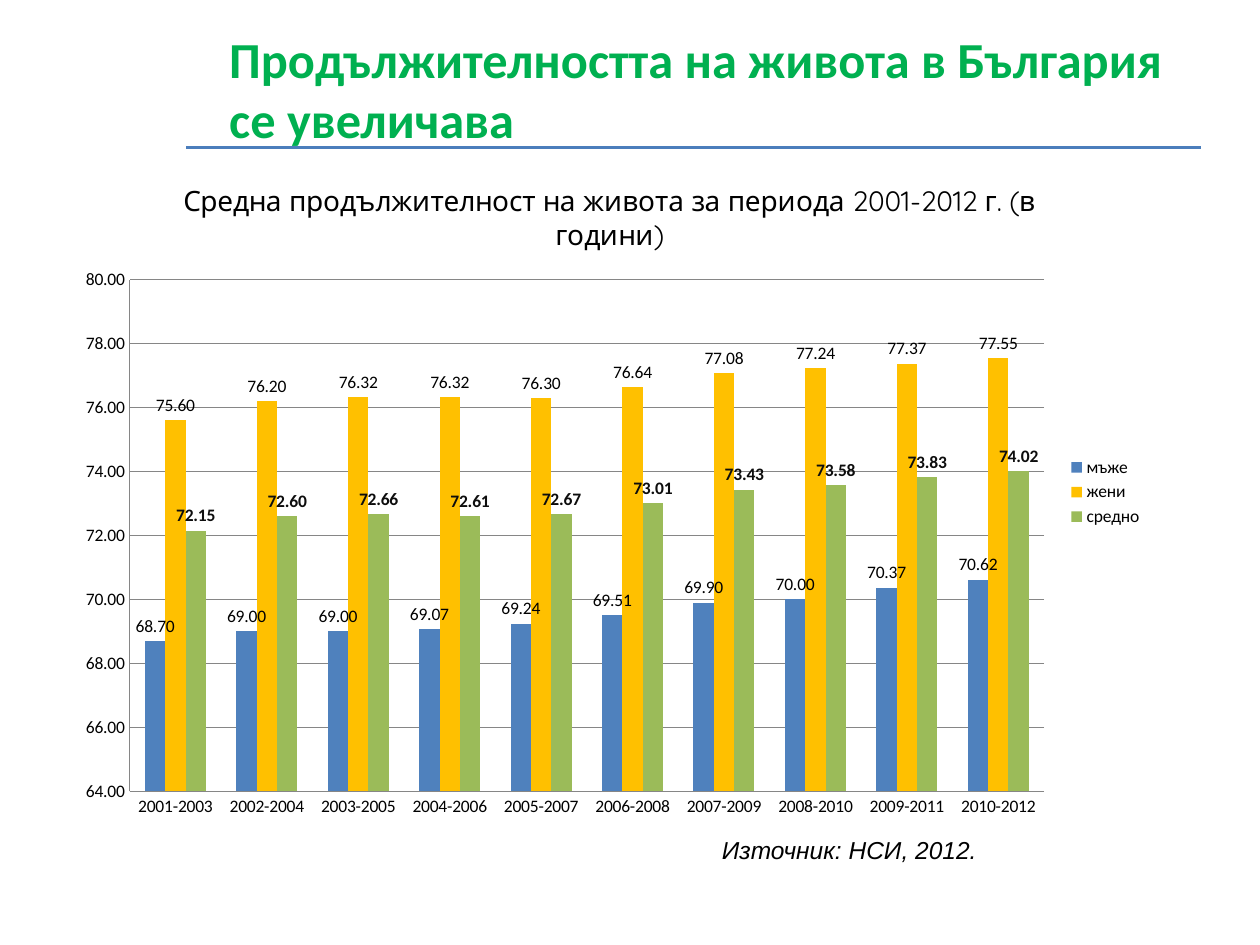
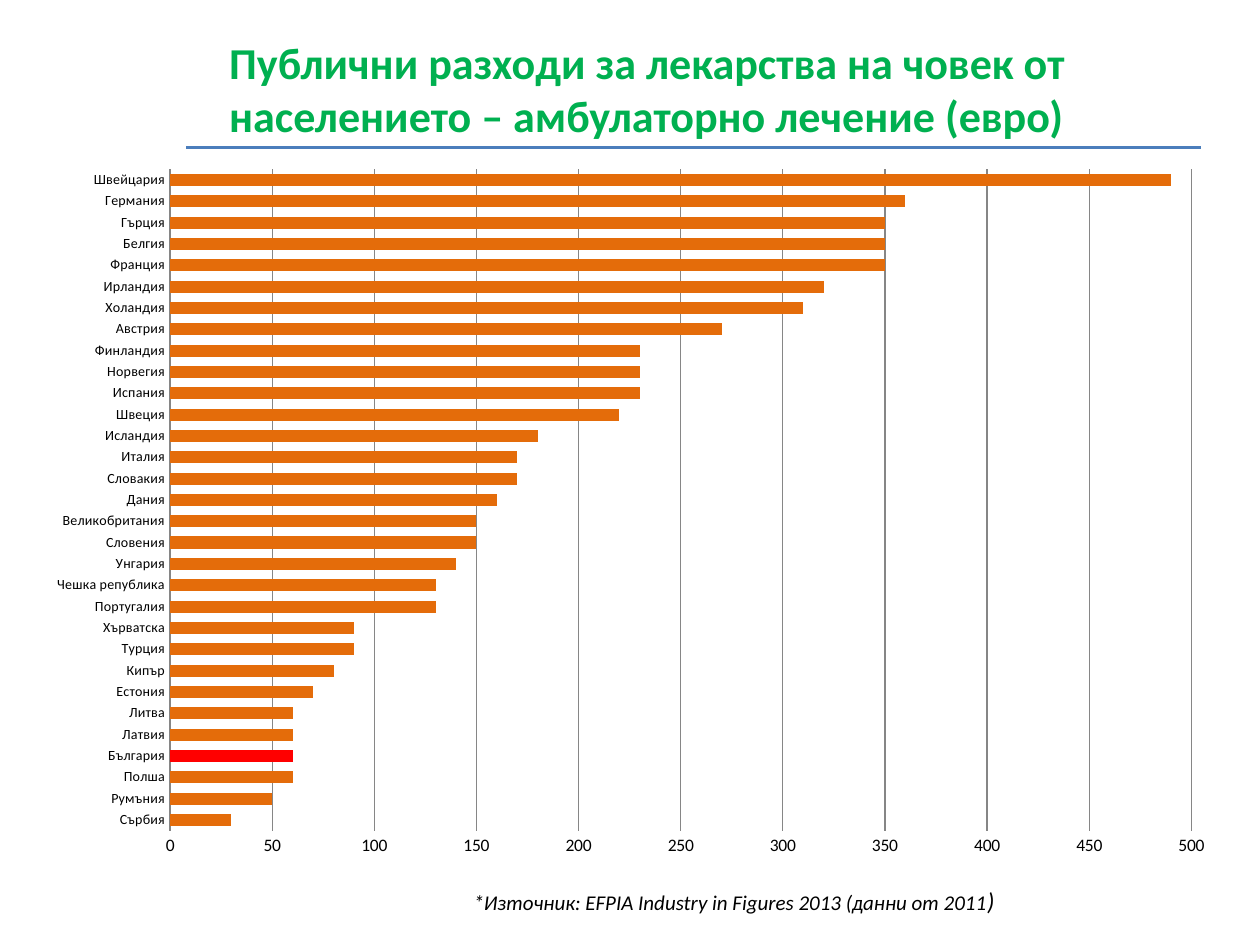
import pptx
import pptx.chart.data
import pptx.dml.color
import pptx.enum.chart
import pptx.enum.shapes
import pptx.enum.text
import pptx.oxml
import pptx.oxml.ns
import pptx.util

Pt = pptx.util.Pt
RGBColor = pptx.dml.color.RGBColor

# Shared colours and fonts
GREEN = RGBColor(0x00, 0xB0, 0x50)
RULE_BLUE = RGBColor(0x4B, 0x7E, 0xBC)
BLACK = RGBColor(0x00, 0x00, 0x00)
NEAR_BLACK = RGBColor(0x0D, 0x0D, 0x0D)
GRID_GREY = RGBColor(0x86, 0x86, 0x86)
MEN_BLUE = RGBColor(0x4F, 0x81, 0xBD)
WOMEN_YELLOW = RGBColor(0xFF, 0xC0, 0x00)
AVERAGE_GREEN = RGBColor(0x9B, 0xBB, 0x59)
ORANGE = RGBColor(0xE4, 0x6C, 0x0A)
RED = RGBColor(0xFF, 0x00, 0x00)
BODY_FONT = "Calibri"

# Life expectancy in years, by overlapping three-year periods
PERIODS = [f"{year}-{year + 2}" for year in range(2001, 2011)]
LIFE_EXPECTANCY = {
    "мъже": (MEN_BLUE, [68.7, 69, 69, 69.07, 69.24, 69.51, 69.9, 70, 70.37, 70.62]),
    "жени": (WOMEN_YELLOW, [75.6, 76.2, 76.32, 76.32, 76.3, 76.64, 77.08, 77.24, 77.37, 77.55]),
    "средно": (AVERAGE_GREEN, [72.15, 72.6, 72.66, 72.61, 72.67, 73.01, 73.43, 73.58, 73.83, 74.02]),
}

# Public spending on medicines per person, in euro
SPENDING = {
    "Сърбия": 30, "Румъния": 50, "Полша": 60, "България": 60, "Латвия": 60,
    "Литва": 60, "Естония": 70, "Кипър": 80, "Турция": 90, "Хърватска": 90,
    "Португалия": 130, "Чешка република": 130, "Унгария": 140, "Словения": 150,
    "Великобритания": 150, "Дания": 160, "Словакия": 170, "Италия": 170,
    "Исландия": 180, "Швеция": 220, "Испания": 230, "Норвегия": 230,
    "Финландия": 230, "Австрия": 270, "Холандия": 310, "Ирландия": 320,
    "Франция": 350, "Белгия": 350, "Гърция": 350, "Германия": 360,
    "Швейцария": 490,
}


def format_font(font, size, color=BLACK, name=BODY_FONT, bold=False, italic=False):
    font.size = Pt(size)
    font.name = name
    font.bold = bold
    font.italic = italic
    font.color.rgb = color


def write(paragraph, text, **font_format):
    """Append a run of text to a paragraph."""
    run = paragraph.add_run()
    run.text = text
    format_font(run.font, **font_format)


def add_titled_slide(deck, title, size):
    """Add a slide with a green heading above a blue rule."""
    slide = deck.slides.add_slide(deck.slide_layouts[5])
    heading = slide.shapes.title
    heading.left, heading.top = Pt(123.8), Pt(16.6)
    heading.width, heading.height = Pt(563.8), Pt(67.7)
    frame = heading.text_frame
    frame.auto_size = pptx.enum.text.MSO_AUTO_SIZE.NONE
    frame.vertical_anchor = pptx.enum.text.MSO_ANCHOR.MIDDLE
    frame.paragraphs[0].alignment = pptx.enum.text.PP_ALIGN.LEFT
    write(frame.paragraphs[0], title, size=size, color=GREEN, bold=True)

    rule = slide.shapes.add_connector(
        pptx.enum.shapes.MSO_CONNECTOR.STRAIGHT, Pt(106.5), Pt(84.3), Pt(686.2), Pt(84.3))
    rule.line.color.rgb = RULE_BLUE
    rule.line.width = Pt(2.25)
    rule.element.spPr.append(pptx.oxml.parse_xml(
        f"<a:effectLst {pptx.oxml.ns.nsdecls('a')}/>"))
    return slide


def add_source_note(slide, left, top, width):
    """Add a one-line note and return its paragraph."""
    note = slide.shapes.add_textbox(Pt(left), Pt(top), Pt(width), Pt(24.5))
    note.text_frame.word_wrap = False
    note.text_frame.auto_size = pptx.enum.text.MSO_AUTO_SIZE.SHAPE_TO_FIT_TEXT
    return note.text_frame.paragraphs[0]


def place_plot(chart, x, y, w, h):
    """Fix the inner plot area, in fractions of the chart."""
    plot_area = chart.element.xpath("c:chart/c:plotArea")[0]
    for layout in plot_area.xpath("c:layout"):
        plot_area.remove(layout)
    sizes = "".join(f'<c:{tag} val="{value}"/>' for tag, value in
                    (("x", x), ("y", y), ("w", w), ("h", h)))
    plot_area.insert(0, pptx.oxml.parse_xml(
        f"<c:layout {pptx.oxml.ns.nsdecls('c')}><c:manualLayout>"
        '<c:layoutTarget val="inner"/><c:xMode val="edge"/><c:yMode val="edge"/>'
        f"{sizes}</c:manualLayout></c:layout>"))


def style_line(line):
    line.color.rgb = GRID_GREY
    line.width = Pt(0.75)


def add_bar_chart(slide, kind, box, categories, series, number_format, scale, gap):
    """Add a clustered chart; series maps a name to (colour, values)."""
    chart_data = pptx.chart.data.CategoryChartData(number_format=number_format)
    chart_data.categories = categories
    for name, (_, values) in series.items():
        chart_data.add_series(name, values)
    chart = slide.shapes.add_chart(kind, *map(Pt, box), chart_data).chart
    format_font(chart.font, size=10)
    chart.has_title = chart.has_legend = False

    plot = chart.plots[0]
    plot.gap_width = gap
    plot.vary_by_categories = False
    for bars, (color, _) in zip(plot.series, series.values()):
        bars.format.fill.solid()
        bars.format.fill.fore_color.rgb = color
        bars.invert_if_negative = False

    for axis in (chart.category_axis, chart.value_axis):
        axis.major_tick_mark = axis.minor_tick_mark = pptx.enum.chart.XL_TICK_MARK.NONE
        style_line(axis.format.line)
    chart.category_axis.has_major_gridlines = False
    values_axis = chart.value_axis
    values_axis.minimum_scale, values_axis.maximum_scale, values_axis.major_unit = scale
    values_axis.has_major_gridlines = True
    style_line(values_axis.major_gridlines.format.line)
    values_axis.tick_labels.number_format = number_format
    values_axis.tick_labels.number_format_is_linked = False
    return chart


def label_bars(bars, **font_format):
    labels = bars.data_labels
    labels.show_value = True
    labels.number_format = "0.00"
    labels.number_format_is_linked = False
    labels.position = pptx.enum.chart.XL_LABEL_POSITION.OUTSIDE_END
    format_font(labels.font, size=10, **font_format)


def add_life_expectancy_slide(deck):
    slide = add_titled_slide(deck, "Продължителността на живота в България се увеличава", 28.8)
    chart = add_bar_chart(
        slide, pptx.enum.chart.XL_CHART_TYPE.COLUMN_CLUSTERED, (36.7, 88.6, 623.5, 385.2),
        PERIODS, LIFE_EXPECTANCY, "0.00", scale=(64, 80, 2), gap=150)
    place_plot(chart, 0.06, 0.185, 0.838, 0.759)

    chart.has_title = True
    write(chart.chart_title.text_frame.paragraphs[0],
          "Средна продължителност на живота за периода 2001-2012 г. (в години)",
          size=16, name="Quicksand")
    chart.chart_title.include_in_layout = False
    chart.has_legend = True
    chart.legend.position = pptx.enum.chart.XL_LEGEND_POSITION.RIGHT
    chart.legend.include_in_layout = False
    format_font(chart.legend.font, size=10)

    men, women, average = chart.plots[0].series
    label_bars(men)
    label_bars(women)
    label_bars(average, color=NEAR_BLACK, bold=True)

    note = add_source_note(slide, 405.4, 473.8, 161.3)
    write(note, "Източник: НСИ, 2012.", size=14, name="Arial", italic=True)


def add_spending_slide(deck):
    slide = add_titled_slide(
        deck, "Публични разходи за лекарства на човек от населението – амбулаторно лечение (евро)",
        25.2)
    note = add_source_note(slide, 263.5, 502.6, 315.4)
    write(note, "*Източник: EFPIA Industry in Figures 2013 (данни от 2011", size=12, italic=True)
    write(note, ")", size=14, italic=True)

    countries = list(SPENDING)
    chart = add_bar_chart(
        slide, pptx.enum.chart.XL_CHART_TYPE.BAR_CLUSTERED, (18.7, 88.6, 682.6, 408.2),
        countries, {"Series 1": (ORANGE, list(SPENDING.values()))}, "#,##0",
        scale=(0, 500, 50), gap=75)
    place_plot(chart, 0.115, 0.02, 0.855, 0.926)
    chart.plots[0].overlap = -25
    chart.value_axis.format.line.fill.background()
    format_font(chart.category_axis.tick_labels.font, size=8)

    # Bulgaria stands out
    bulgaria = chart.plots[0].series[0].points[countries.index("България")]
    bulgaria.format.fill.solid()
    bulgaria.format.fill.fore_color.rgb = RED


def main():
    deck = pptx.Presentation()
    deck.slide_width, deck.slide_height = Pt(720), Pt(540)
    add_life_expectancy_slide(deck)
    add_spending_slide(deck)
    deck.save("out.pptx")


if __name__ == "__main__":
    main()
